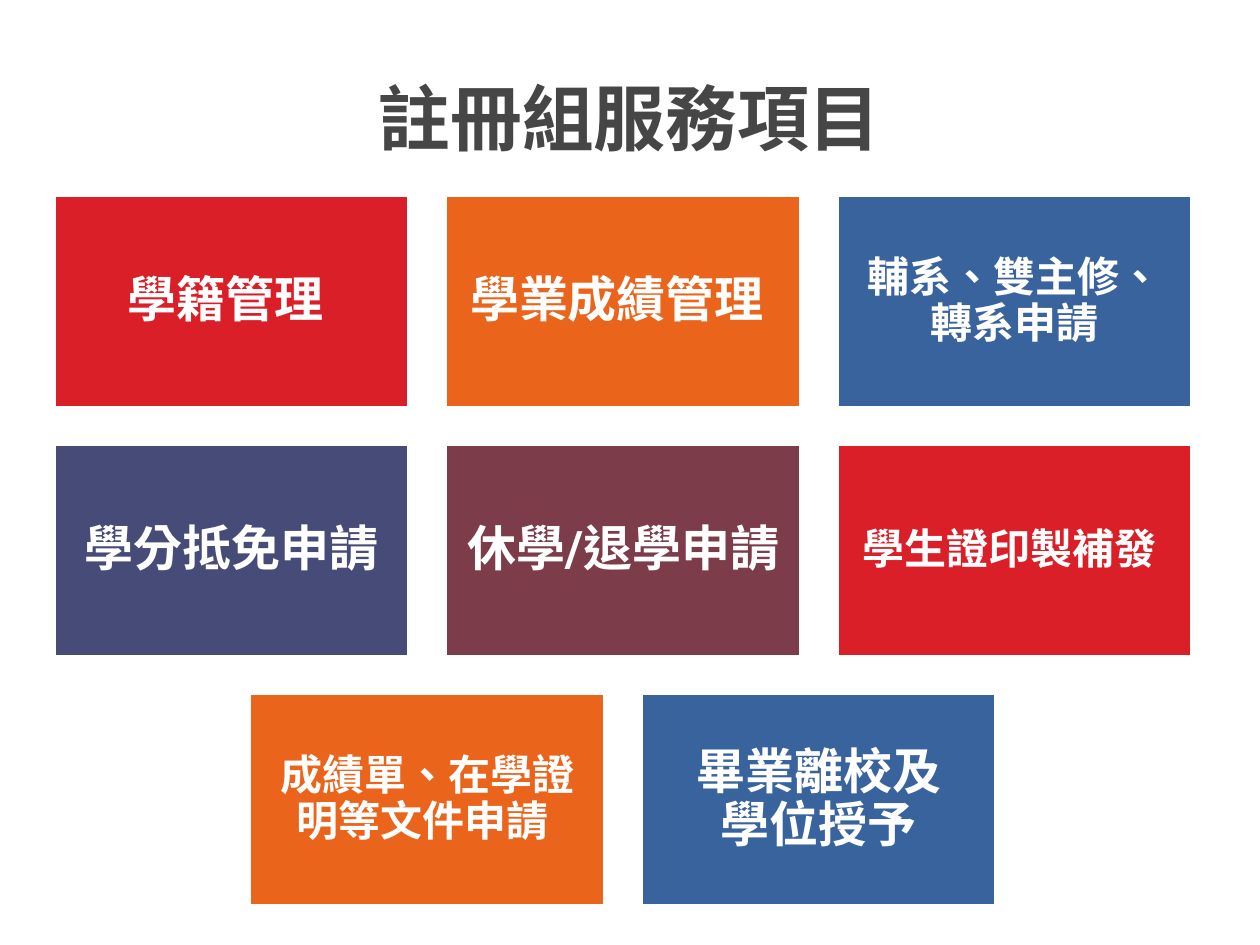
from lxml import etree
from pptx import Presentation
from pptx import util as u
from pptx.dml.color import RGBColor
from pptx.enum import shapes, text
from pptx.oxml.ns import qn

CARD_WIDTH, CARD_HEIGHT, GAP = 7.16, 4.29, 0.73
GRID_CENTRE, GRID_TOP = 12.56, 3.94

SERVICE_ROWS = [
    [("學籍管理 ", "DA1F28", 28), ("學業成績管理 ", "EB641B", 28), ("輔系、雙主修、轉系申請", "39639D", 24)],
    [("學分抵免申請", "474B78", 28), ("休學/退學申請", "7D3C4A", 28), ("學生證印製補發 ", "DA1F28", 24)],
    [("成績單、在學證明等文件申請 ", "EB641B", 24), ("畢業離校及\n學位授予", "39639D", 28)],
]


def color(hex_value):
    """Turn a hex string into a colour."""
    return RGBColor.from_string(hex_value)


def write(holder, wording, size, font, ink, inset, line_spacing=1.0):
    """Write centred bold text into a shape or text box."""
    frame = holder.text_frame
    frame.word_wrap = True
    frame.vertical_anchor = text.MSO_ANCHOR.MIDDLE
    frame.margin_left = frame.margin_right = u.Cm(inset)
    frame.margin_top = frame.margin_bottom = u.Cm(inset)
    paragraph = frame.paragraphs[0]
    paragraph.text = wording
    paragraph.alignment = text.PP_ALIGN.CENTER
    paragraph.line_spacing = line_spacing
    for run in paragraph.runs:
        run.font.size = u.Pt(size)
        run.font.bold = True
        run.font.color.rgb = color(ink)
        run.font.name = font
        properties = run._r.get_or_add_rPr()
        properties.set("lang", "zh-TW")
        etree.SubElement(properties, qn("a:ea")).set("typeface", font)


def add_title(slide, wording):
    """Add the heading across the top of the slide."""
    heading = slide.shapes.add_textbox(u.Cm(1.27), u.Cm(0.76), u.Cm(22.86), u.Cm(3.18))
    write(heading, wording, size=41, font="Noto Sans Mono", ink="464646", inset=0.13)


def add_card(slide, left, top, service, fill, size):
    """Add one coloured service card."""
    card = slide.shapes.add_shape(
        shapes.MSO_SHAPE.RECTANGLE, u.Cm(left), u.Cm(top), u.Cm(CARD_WIDTH), u.Cm(CARD_HEIGHT))
    card.shadow.inherit = False
    card.fill.solid()
    card.fill.fore_color.rgb = color(fill)
    card.line.color.rgb = color("FFFFFF")
    card.line.width = u.Pt(2)
    write(card, service, size=size, font="Roboto", ink="FFFFFF",
          inset=0.3 if size == 28 else 0.25, line_spacing=0.9)


def add_services(slide):
    """Lay out the cards in rows centred on a common axis."""
    for row, services in enumerate(SERVICE_ROWS):
        row_width = len(services) * (CARD_WIDTH + GAP) - GAP
        top = GRID_TOP + row * (CARD_HEIGHT + GAP)
        for column, (service, fill, size) in enumerate(services):
            left = GRID_CENTRE - row_width / 2 + column * (CARD_WIDTH + GAP)
            add_card(slide, left, top, service, fill, size)


def main():
    """Build and save the slide."""
    deck = Presentation()
    deck.slide_width, deck.slide_height = u.Cm(25.4), u.Cm(19.05)
    slide = deck.slides.add_slide(deck.slide_layouts[6])
    add_title(slide, "註冊組服務項目")
    add_services(slide)
    deck.save("out.pptx")


if __name__ == "__main__":
    main()
